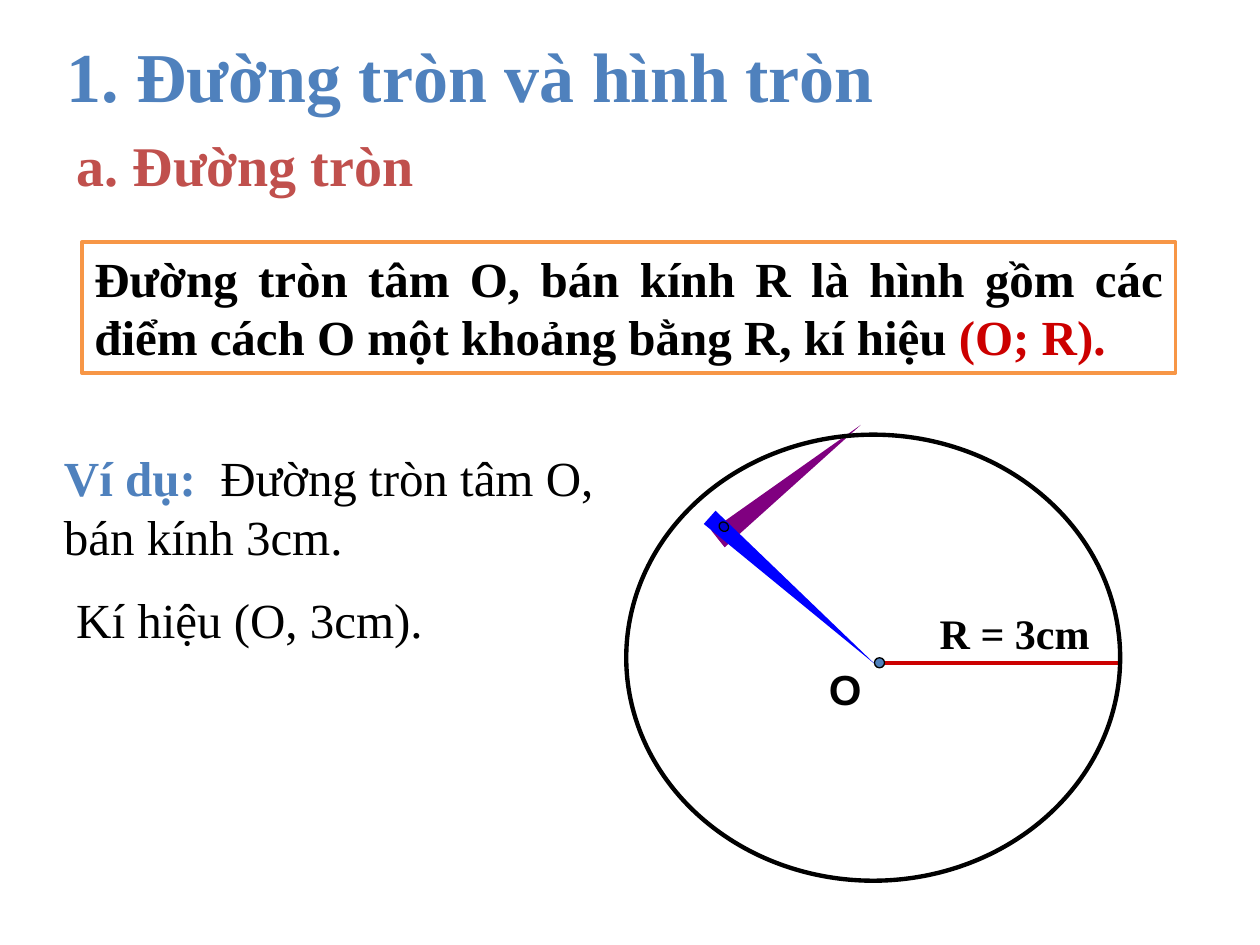
from pptx import Presentation
from pptx.dml.color import RGBColor
from pptx.enum.shapes import MSO_CONNECTOR, MSO_SHAPE
from pptx.enum.text import MSO_ANCHOR, PP_ALIGN
from pptx.oxml.ns import qn
from pptx.util import Inches, Pt
from lxml import etree

LEFT, JUSTIFY = PP_ALIGN.LEFT, PP_ALIGN.JUSTIFY
TOP = MSO_ANCHOR.TOP
RECTANGLE, OVAL = MSO_SHAPE.RECTANGLE, MSO_SHAPE.OVAL
TRIANGLE = MSO_SHAPE.ISOSCELES_TRIANGLE
STRAIGHT = MSO_CONNECTOR.STRAIGHT

BLACK = RGBColor(0x00, 0x00, 0x00)
WHITE = RGBColor(0xFF, 0xFF, 0xFF)
BLUE = RGBColor(0x4F, 0x81, 0xBD)
BRICK = RGBColor(0xC0, 0x50, 0x4D)
ORANGE = RGBColor(0xF7, 0x96, 0x46)
RED = RGBColor(0xCC, 0x00, 0x00)
PURPLE = RGBColor(0x80, 0x00, 0x80)
BRIGHT_BLUE = RGBColor(0x00, 0x00, 0xFF)
HINGE_BLUE = RGBColor(0x00, 0x00, 0xCC)

deck = Presentation()
deck.slide_width, deck.slide_height = Inches(10), Inches(7.5)
slide = deck.slides.add_slide(deck.slide_layouts[6])

# Grid of 100 columns by 75 rows
COLUMN = deck.slide_width / 100
ROW = deck.slide_height / 75


def place(left, top, width, height):
    return [round(n * unit) for n, unit in
            zip((left, top, width, height), (COLUMN, ROW, COLUMN, ROW))]


def write(paragraphs, box=None, holder=None, size=28, font="Times New Roman",
          align=LEFT, wrap=False, gap=0):
    """Each paragraph is a list of (text, colour, bold) runs."""
    holder = holder or slide.shapes.add_textbox(*place(*box))
    frame = holder.text_frame
    frame.word_wrap = wrap
    frame.vertical_anchor = TOP
    for number, runs in enumerate(paragraphs):
        paragraph = frame.add_paragraph() if number else frame.paragraphs[0]
        paragraph.alignment = align
        paragraph.space_before = Pt(gap if number else 0)
        for text, colour, bold in runs:
            run = paragraph.add_run()
            run.text = text
            run.font.name, run.font.size = font, Pt(size)
            run.font.bold, run.font.color.rgb = bold, colour


# Radius with its label
radius = slide.shapes.add_connector(
    STRAIGHT, *place(69.7, 52.6, 88.9, 52.6))
radius.line.color.rgb = RED
radius.line.width = Pt(2.25)
etree.SubElement(radius.element.spPr, qn("a:effectLst"))
write([[("R = 3cm", BLACK, True)]], (73.6, 47.7, 14, 5.1), size=24)

# Definition frame, compass legs and hinge, circle, centre: back to front
figures = [
    (RECTANGLE, (6.5, 19.2, 86.8, 10.4), 0, WHITE, ORANGE, 2),
    (TRIANGLE, (61.8, 31, 1.7, 14.5), 51.4, PURPLE, None, 0),
    (TRIANGLE, (62.2, 38.1, 1.4, 17.6), 131.6, BRIGHT_BLUE, None, 0),
    (OVAL, (57.1, 41.4, 0.7, 0.8), 315, HINGE_BLUE, BLACK, 0.75),
    (OVAL, (49.7, 34.5, 39.2, 35.4), 0, None, BLACK, 2.5),
    (OVAL, (69.4, 52.2, 0.8, 0.8), 0, BLUE, BLACK, 0.75),
]
drawn = []
for kind, box, turn, fill, outline, weight in figures:
    figure = slide.shapes.add_shape(kind, *place(*box))
    figure.shadow.inherit = False
    figure.rotation = turn
    if fill is None:
        figure.fill.background()
    else:
        figure.fill.solid()
        figure.fill.fore_color.rgb = fill
    if outline is None:
        figure.line.fill.background()
    else:
        figure.line.color.rgb = outline
        figure.line.width = Pt(weight)
    drawn.append(figure)

# Definition
definition = drawn[0]
write([[("Đường tròn tâm O, bán kính R là hình gồm các điểm cách O "
         "một khoảng bằng R, kí hiệu ", BLACK, True),
        ("(O; R).", RED, True)]],
      holder=definition, align=JUSTIFY, wrap=True)

# Centre label
write([[("O", BLACK, True)]], (64.8, 52.2, 4.6, 5), size=24, font="Arial")

# Example
write([[("Ví dụ: ", BLUE, True),
        (" Đường tròn tâm O, bán kính 3cm.", BLACK, False)],
       [(" Kí hiệu (O, 3cm).", BLACK, False)]],
      (4.1, 35, 48.3, 17.5), wrap=True, gap=14)

# Headings
write([[("1. Đường tròn và hình tròn", BLUE, True)]],
      (4.3, 2.1, 66.8, 7.7), size=40)
write([[("a. Đường tròn", BRICK, True)]], (5.1, 9.9, 29, 6.4), size=32)

deck.save("out.pptx")
